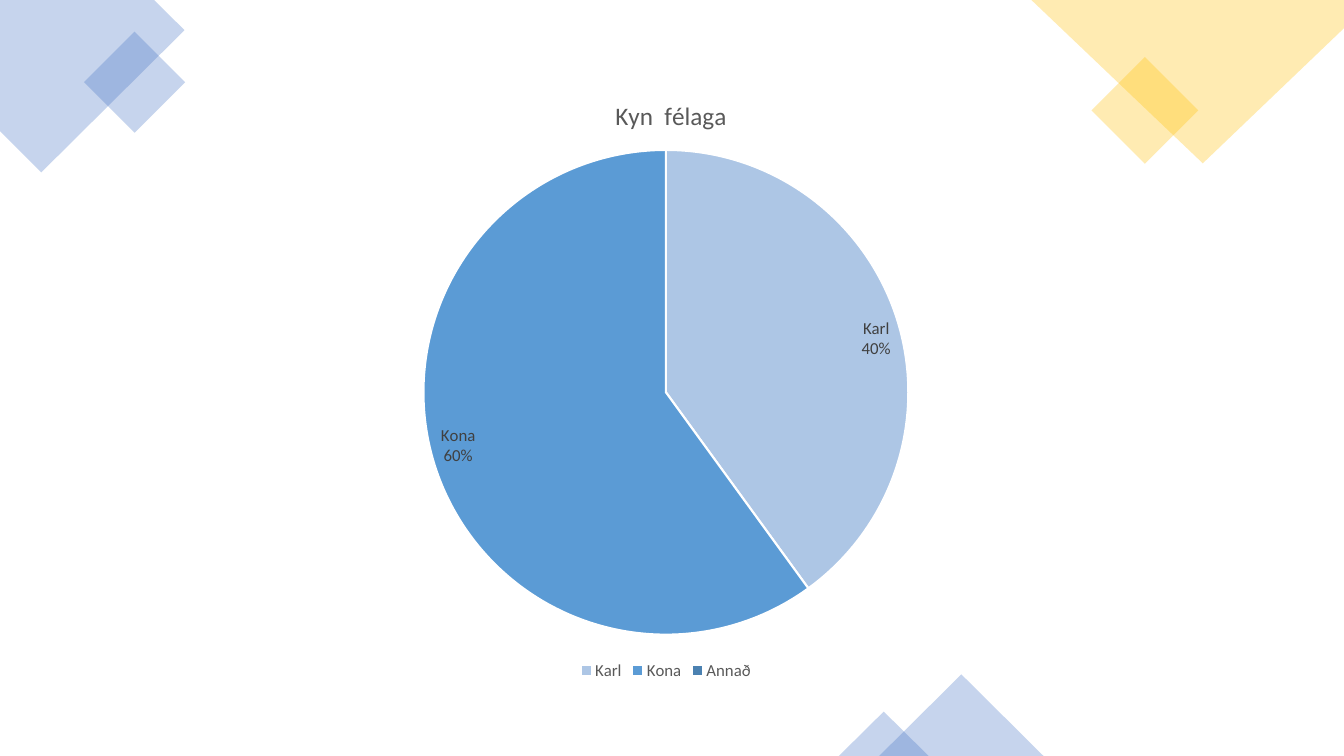
"""Build a slide with a pie chart of members by gender."""
from lxml import etree
from pptx import Presentation
from pptx.chart.data import CategoryChartData
from pptx.dml.color import RGBColor
from pptx.enum.chart import XL_CHART_TYPE, XL_LABEL_POSITION, XL_LEGEND_POSITION
from pptx.enum.shapes import MSO_SHAPE
from pptx.oxml import parse_xml
from pptx.oxml.ns import nsdecls, qn
from pptx.util import Inches, Pt

PIE = XL_CHART_TYPE.PIE
INSIDE_END = XL_LABEL_POSITION.INSIDE_END
BOTTOM = XL_LEGEND_POSITION.BOTTOM
SQUARE = MSO_SHAPE.RECTANGLE
TRIANGLE = MSO_SHAPE.ISOSCELES_TRIANGLE

BLUE = RGBColor(0x44, 0x72, 0xC4)
GOLD = RGBColor(0xFF, 0xC0, 0x00)
WHITE = RGBColor(0xFF, 0xFF, 0xFF)
LABEL_GREY = RGBColor(0x40, 0x40, 0x40)
TEXT_GREY = RGBColor(0x59, 0x59, 0x59)
FONT = "Calibri"
OPACITY = 30

TITLE = "Kyn  félaga"
GENDERS = [
    ("Karl", 40, RGBColor(0xAD, 0xC6, 0xE5)),
    ("Kona", 60, RGBColor(0x5B, 0x9B, 0xD5)),
    ("Annað", 0, RGBColor(0x4B, 0x81, 0xB1)),
]
CHART_BOX = (1.14, 0.69, 10.93, 6.1)
TITLE_PLACE = {"x": 0.45, "y": 0.04}
PIE_PLACE = {"x": 0.28, "y": 0.13, "w": 0.44, "h": 0.79}

CORNERS = [
    (BLUE, [(0, 0), (1.53, 0), (1.83, 0.3), (0.41, 1.71), (0, 1.3)]),
    (GOLD, [(10.23, 0), (13.33, 0), (13.33, 0.28), (11.93, 1.62)]),
]
ACCENTS = [
    (SQUARE, BLUE, (0.98, 0.46, 0.71, 0.71), 315),
    (SQUARE, GOLD, (10.98, 0.72, 0.75, 0.75), 315),
    (TRIANGLE, BLUE, (8.72, 6.69, 1.63, 0.81), 0),
    (TRIANGLE, BLUE, (8.32, 7.06, 0.89, 0.44), 0),
]


def tint(shape, color):
    shape.shadow.inherit = False
    shape.line.fill.background()
    shape.fill.solid()
    shape.fill.fore_color.rgb = color
    rgb = shape.fill._xPr.find(qn("a:solidFill"))[0]
    etree.SubElement(rgb, qn("a:alpha"), val=str(OPACITY * 1000))


def style(font, size, color):
    font.name = FONT
    font.size = Pt(size)
    font.bold = False
    font.color.rgb = color


def manual_layout(place, inner=False):
    target = '<c:layoutTarget val="inner"/>' if inner else ""
    modes = "".join(f'<c:{side}Mode val="edge"/>' for side in "xy")
    values = "".join(f'<c:{key} val="{value}"/>' for key, value in place.items())
    return parse_xml(
        f'<c:layout {nsdecls("c")}><c:manualLayout>{target}{modes}{values}'
        "</c:manualLayout></c:layout>"
    )


def replace_layout(parent, layout, index):
    for old in parent.findall(qn("c:layout")):
        parent.remove(old)
    parent.insert(index, layout)


def add_gender_chart(slide):
    data = CategoryChartData(number_format="General")
    data.categories = [name for name, _, _ in GENDERS]
    data.add_series("Series 1", [share for _, share, _ in GENDERS])
    chart = slide.shapes.add_chart(PIE, *map(Inches, CHART_BOX), data).chart
    style(chart.font, 12, TEXT_GREY)

    chart.has_title = True
    heading = chart.chart_title.text_frame
    heading.text = TITLE
    style(heading.paragraphs[0].runs[0].font, 18, TEXT_GREY)
    replace_layout(chart.chart_title._element, manual_layout(TITLE_PLACE), 1)
    plot_area = chart._chartSpace.chart.plotArea
    replace_layout(plot_area, manual_layout(PIE_PLACE, inner=True), 0)

    chart.has_legend = True
    chart.legend.position = BOTTOM
    chart.legend.include_in_layout = False
    style(chart.legend.font, 12, TEXT_GREY)

    chart.plots[0].vary_by_categories = True
    shares = chart.plots[0].series[0]
    for index, (_, _, color) in enumerate(GENDERS):
        wedge = shares.points[index].format
        wedge.fill.solid()
        wedge.fill.fore_color.rgb = color
        wedge.line.color.rgb = WHITE
        wedge.line.width = Pt(1.5)

    labels = shares.data_labels
    labels.show_category_name = True
    labels.show_percentage = True
    labels.show_value = False
    labels.number_format = "0%"
    labels.number_format_is_linked = False
    labels.position = INSIDE_END
    style(labels.font, 12, LABEL_GREY)
    label_xml = labels._element
    separator = etree.Element(qn("c:separator"))
    separator.text = "\n"
    label_xml.find(qn("c:showBubbleSize")).addnext(separator)
    empty = [index for index, (_, share, _) in enumerate(GENDERS) if not share]
    for position, index in enumerate(empty):
        label_xml.insert(position, parse_xml(
            f'<c:dLbl {nsdecls("c")}><c:idx val="{index}"/><c:delete val="1"/></c:dLbl>'
        ))


def main():
    deck = Presentation()
    deck.slide_width, deck.slide_height = Inches(13.33), Inches(7.5)
    slide = deck.slides.add_slide(deck.slide_layouts[6])

    for color, corners in CORNERS:
        points = [(Inches(x), Inches(y)) for x, y in corners]
        outline = slide.shapes.build_freeform(*points[0])
        outline.add_line_segments(points[1:], close=True)
        tint(outline.convert_to_shape(), color)
    for kind, color, box, rotation in ACCENTS:
        accent = slide.shapes.add_shape(kind, *map(Inches, box))
        accent.rotation = rotation
        tint(accent, color)
    add_gender_chart(slide)
    deck.save("out.pptx")


if __name__ == "__main__":
    main()
